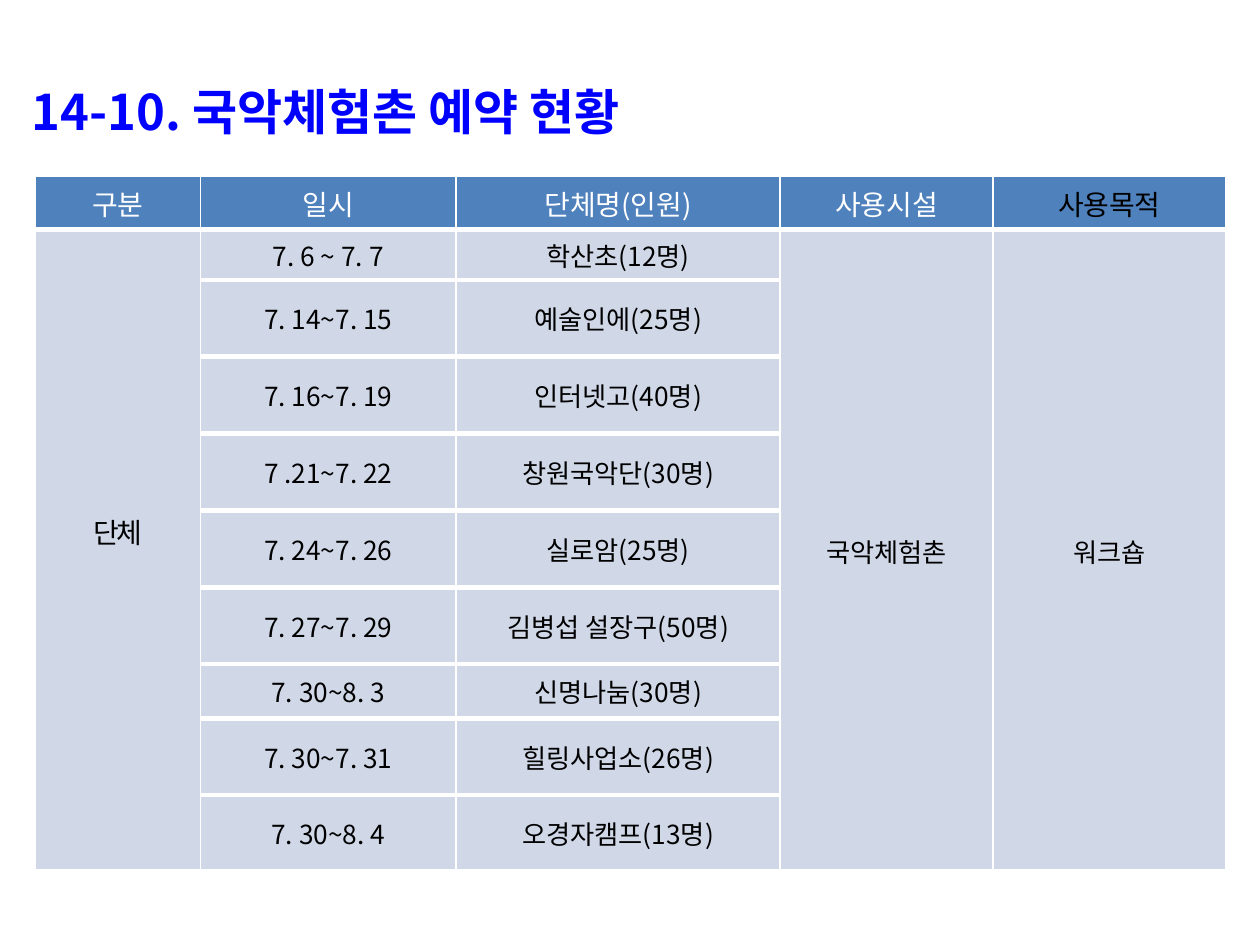
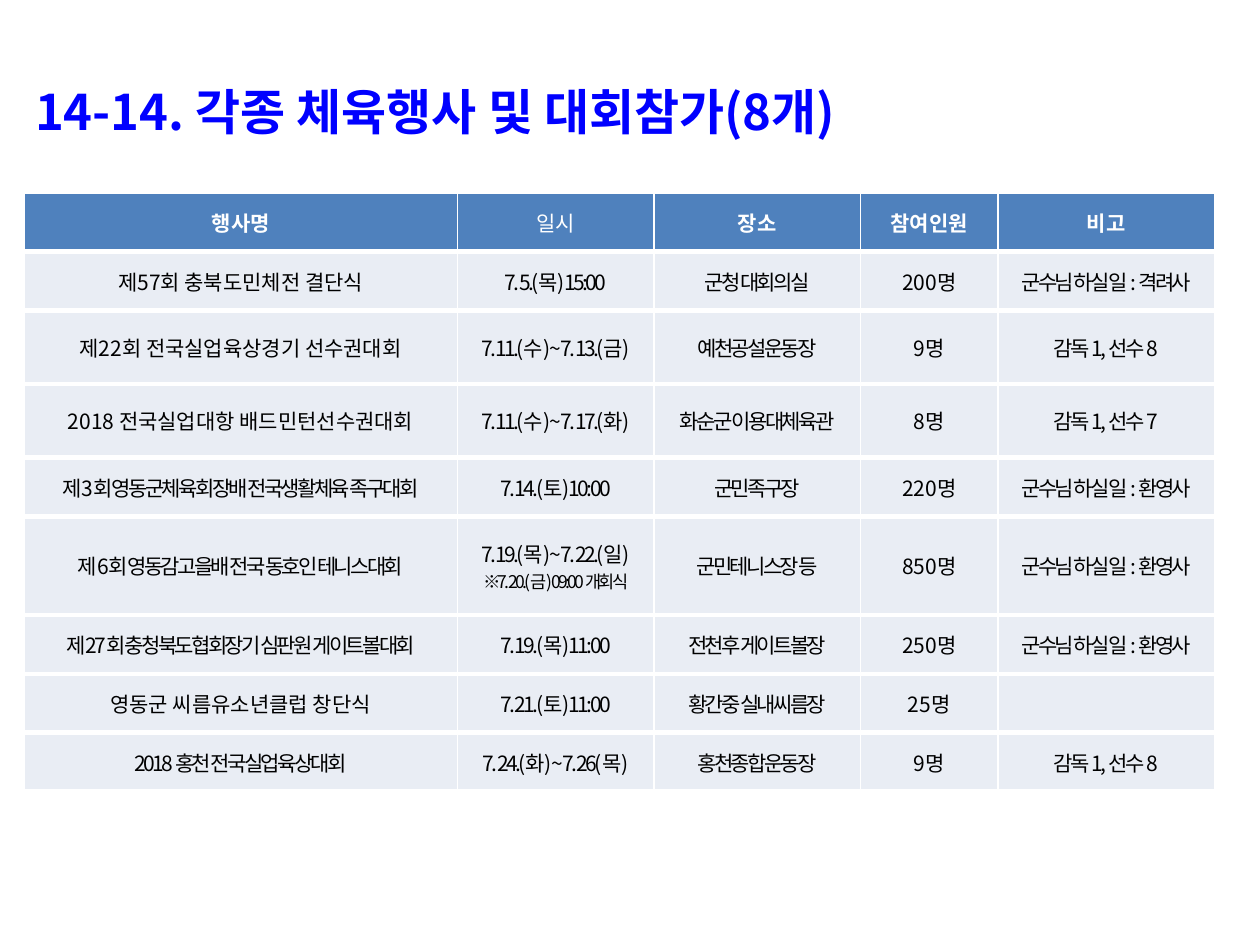
"""Builds two slides of reservation and sports event tables."""
from dataclasses import dataclass

from lxml import etree
from pptx import Presentation
from pptx import util as u
from pptx.dml.color import RGBColor
from pptx.enum import text
from pptx.oxml import ns


@dataclass(frozen=True)
class Theme:
    font: str = "Noto Sans CJK KR"
    title: str = "0000FF"
    header: str = "4F81BD"
    light: str = "FFFFFF"
    dark: str = "000000"
    title_size: int = 28
    title_line_top: float = 46.4
    note_size: int = 10
    tight: int = -150
    thin: int = 1
    thick: int = 3


THEME = Theme()

BOOKINGS = [
    ("7. 6 ~ 7. 7", "학산초(12명)"),
    ("7. 14~7. 15", "예술인에(25명)"),
    ("7. 16~7. 19", "인터넷고(40명)"),
    ("7 .21~7. 22", "창원국악단(30명)"),
    ("7. 24~7. 26", "실로암(25명)"),
    ("7. 27~7. 29", "김병섭 설장구(50명)"),
    ("7. 30~8. 3", "신명나눔(30명)"),
    ("7. 30~7. 31", "힐링사업소(26명)"),
    ("7. 30~8. 4", "오경자캠프(13명)"),
]
EVENTS = [
    ("제57회 충북도민체전 결단식", "7. 5.(목) 15:00", "군청 대회의실", "200명", "군수님 하실 일 : 격려사"),
    ("제22회 전국실업육상경기 선수권대회", "7. 11.(수) ~ 7. 13.(금)", "예천공설운동장", "9명", "감독 1, 선수 8"),
    ("2018 전국실업대항 배드민턴선수권대회", "7. 11.(수) ~ 7. 17.(화)", "화순군 이용대체육관", "8명", "감독 1, 선수 7"),
    ("제3회 영동군체육회장배 전국생활체육 족구대회", "7. 14.(토) 10:00", "군민족구장", "220명", "군수님 하실 일 : 환영사"),
    ("제6회 영동감고을배 전국 동호인 테니스대회",
     "7. 19.(목) ~ 7. 22.(일)\n※7. 20.(금) 09:00 개회식", "군민테니스장 등", "850명", "군수님 하실 일 : 환영사"),
    ("제27회 충청북도협회장기 심판원 게이트볼대회", "7. 19.(목) 11:00", "전천후 게이트볼장", "250명", "군수님 하실 일 : 환영사"),
    ("영동군 씨름유소년클럽 창단식", "7. 21.(토) 11:00", "황간중 실내씨름장", "25명", ""),
    ("2018 홍천 전국실업육상대회", "7. 24.(화) ~ 7. 26(목)", "홍천종합운동장", "9명", "감독 1, 선수 8"),
]
TIGHT_EVENTS = {4, 5, 6, 8}

RESERVATION_SLIDE = {
    "title": "14-10. 국악체험촌 예약 현황",
    "title_box": (10.8, 34.6, 697, 52.6),
    "title_inset": 7.2,
    "origin": (20.2, 100.8),
    "headers": ["구분", "일시", "단체명(인원)", "사용시설", "사용목적"],
    "rows": [("단체", *BOOKINGS[0], "국악체험촌", "워크숍")]
            + [("", *booking, "", "") for booking in BOOKINGS[1:]],
    "widths": [94.3, 146.2, 185, 121.7, 133.2],
    "heights": [25.2, 25.2] + [43.9] * 5 + [31, 43.9, 43.9],
    "merged": [0, 3, 4],
    "fill": "D0D8E8",
    "header_size": 16,
    "body_size": 15,
    "bold_headers": [],
    "dark_headers": [4],
    "is_tight": lambda row, column: column == 0,
}
EVENT_SLIDE = {
    "title": "14-14. 각종 체육행사 및 대회참가(8개)",
    "title_box": (8.6, 20.2, 697.7, 73.4),
    "title_inset": 11.5,
    "origin": (13.7, 110.2),
    "headers": ["행사명", "일시", "장소", "참여인원", "비고"],
    "rows": EVENTS,
    "widths": [247.7, 112.3, 118.1, 78.5, 123.8],
    "heights": [33.6] * 9,
    "merged": [],
    "fill": "E9EDF4",
    "header_size": 12,
    "body_size": 12,
    "bold_headers": [0, 2, 3, 4],
    "dark_headers": [],
    "is_tight": lambda row, column: column in (1, 2, 4) or column == 0 and row in TIGHT_EVENTS,
}


def format_runs(paragraph, size, color, bold=False, tight=False):
    for run in paragraph.runs:
        run.font.name = THEME.font
        run.font.size = u.Pt(size)
        run.font.bold = bold
        run.font.color.rgb = RGBColor.from_string(color)
        properties = run.font._element
        east_asian = etree.SubElement(properties, ns.qn("a:ea"))
        east_asian.set("typeface", THEME.font)
        if tight:
            properties.set("spc", str(THEME.tight))


def add_borders(cell, top):
    properties = cell._tc.get_or_add_tcPr()
    borders = [("lnL", THEME.thin), ("lnR", THEME.thin), ("lnT", top), ("lnB", THEME.thick)]
    for position, (side, width) in enumerate(borders):
        line = etree.Element(ns.qn(f"a:{side}"), w=str(u.Pt(width)))
        fill = etree.SubElement(line, ns.qn("a:solidFill"))
        etree.SubElement(fill, ns.qn("a:srgbClr"), val=THEME.light)
        properties.insert(position, line)


def add_title(slide, content):
    title = slide.shapes.title
    left, top, width, height = content["title_box"]
    title.left, title.top = u.Pt(left), u.Pt(top)
    title.width, title.height = u.Pt(width), u.Pt(height)
    frame = title.text_frame
    frame.text = content["title"]
    frame.word_wrap = True
    frame.auto_size = text.MSO_AUTO_SIZE.NONE
    frame.vertical_anchor = text.MSO_ANCHOR.TOP
    frame.margin_left = u.Pt(content["title_inset"])
    frame.margin_top = u.Pt(THEME.title_line_top - top)
    frame.margin_bottom = 0
    paragraph = frame.paragraphs[0]
    paragraph.alignment = text.PP_ALIGN.LEFT
    paragraph.space_before = u.Pt(0)
    format_runs(paragraph, THEME.title_size, THEME.title, bold=True)


def fill_cell(cell, value, row, column, content):
    is_header = row == 0
    add_borders(cell, THEME.thin if is_header else THEME.thick)
    cell.fill.solid()
    cell.fill.fore_color.rgb = RGBColor.from_string(THEME.header if is_header else content["fill"])
    cell.vertical_anchor = text.MSO_ANCHOR.MIDDLE
    cell.text_frame.text = value
    is_light = is_header and column not in content["dark_headers"]
    is_group = column in content["merged"][:1]
    size = content["header_size"] if is_header or is_group else content["body_size"]
    if is_group and not is_header:
        cell.margin_bottom = u.Pt(26)
    for paragraph in cell.text_frame.paragraphs:
        paragraph.alignment = text.PP_ALIGN.CENTER
        format_runs(
            paragraph,
            THEME.note_size if paragraph.text.startswith("※") else size,
            THEME.light if is_light else THEME.dark,
            bold=is_header and column in content["bold_headers"],
            tight=not is_header and content["is_tight"](row, column),
        )


def add_table(slide, content):
    rows = [content["headers"], *content["rows"]]
    widths, heights = content["widths"], content["heights"]
    frame = [u.Pt(value) for value in (*content["origin"], sum(widths), sum(heights))]
    table = slide.shapes.add_table(len(rows), len(widths), *frame).table
    table.first_row = table.horz_banding = False
    for column, width in zip(table.columns, widths):
        column.width = u.Pt(width)
    for row, height in zip(table.rows, heights):
        row.height = u.Pt(height)
    for row, values in enumerate(rows):
        for column, value in enumerate(values):
            fill_cell(table.cell(row, column), value, row, column, content)
    for column in content["merged"]:
        table.cell(1, column).merge(table.cell(len(rows) - 1, column))


def main():
    presentation = Presentation()
    presentation.slide_width, presentation.slide_height = u.Pt(720), u.Pt(540)
    for content in (RESERVATION_SLIDE, EVENT_SLIDE):
        slide = presentation.slides.add_slide(presentation.slide_layouts[5])
        add_title(slide, content)
        add_table(slide, content)
    presentation.save("out.pptx")


if __name__ == "__main__":
    main()
